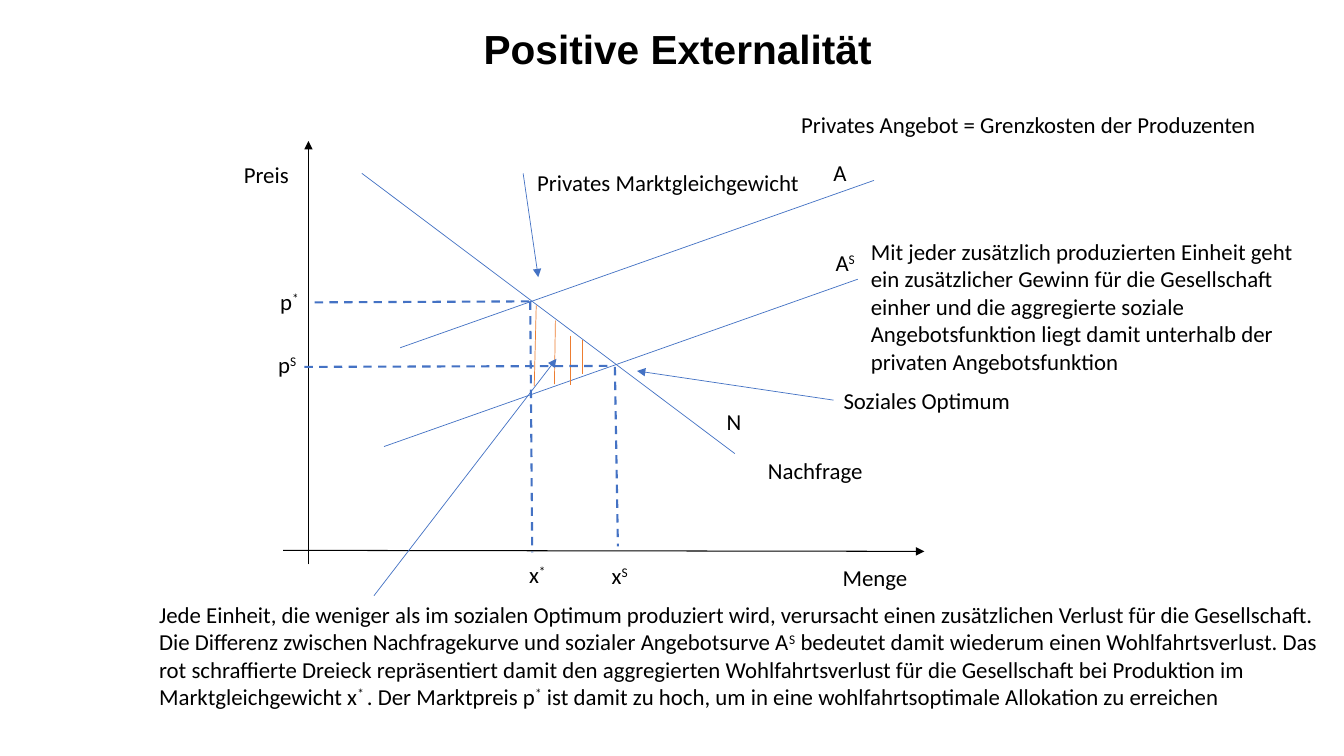
from dataclasses import dataclass

from lxml import etree
from pptx import Presentation
from pptx.dml.color import RGBColor
from pptx.enum.dml import MSO_LINE
from pptx.enum.shapes import MSO_CONNECTOR
from pptx.enum.text import MSO_ANCHOR, MSO_AUTO_SIZE, PP_ALIGN
from pptx.oxml.ns import qn
from pptx.util import Inches, Pt

STRAIGHT = MSO_CONNECTOR.STRAIGHT
DASH = MSO_LINE.DASH
MIDDLE = MSO_ANCHOR.MIDDLE
CENTER = PP_ALIGN.CENTER
FIT_SHAPE = MSO_AUTO_SIZE.SHAPE_TO_FIT_TEXT
KEEP_SIZE = MSO_AUTO_SIZE.NONE

COLUMNS, ROWS = 133.33, 75
CELL = 0.1
LABEL_ROWS = 3.8
SOCIAL_SHIFT = (-1.6, 9.8)


@dataclass(frozen=True)
class Theme:
    ink: RGBColor = RGBColor(0x00, 0x00, 0x00)
    curve: RGBColor = RGBColor(0x44, 0x72, 0xC4)
    loss: RGBColor = RGBColor(0xED, 0x7D, 0x31)
    title_font: str = "Arial"
    text_font: str = "Calibri"
    title_size: float = 29
    text_size: float = 16.3
    thin: float = 0.5
    axis: float = 0.75
    guide: float = 1.5


def cells(*counts):
    return [Inches(count * CELL) for count in counts]


class Diagram:
    def __init__(self, slide, theme):
        self.slide = slide
        self.theme = theme

    def run(self, paragraph, wording, font, size, bold=False, raised=False):
        run = paragraph.add_run()
        run.text = wording
        run.font.name = font
        run.font.size = Pt(size)
        run.font.bold = bold
        run.font.color.rgb = self.theme.ink
        if raised:
            run.font._element.set("baseline", "30000")

    def frame(self, column, row, width, height):
        return self.slide.shapes.add_textbox(*cells(column, row, width, height)).text_frame

    def title(self, column, row, width, height, wording):
        frame = self.frame(column, row, width, height)
        frame.word_wrap = True
        frame.vertical_anchor = MIDDLE
        paragraph = frame.paragraphs[0]
        paragraph.alignment = CENTER
        self.run(paragraph, wording, self.theme.title_font, self.theme.title_size, bold=True)

    def text(self, column, row, width, height, pieces, wrap=True):
        frame = self.frame(column, row, width, height)
        frame.word_wrap = wrap
        frame.auto_size = KEEP_SIZE if wrap else FIT_SHAPE
        for index, piece in enumerate(pieces):
            self.run(frame.paragraphs[0], piece, self.theme.text_font,
                     self.theme.text_size, raised=index % 2 == 1)

    def label(self, column, row, width, *pieces):
        self.text(column, row, width, LABEL_ROWS, pieces, wrap=False)

    def line(self, start, end, color, width, dashed=False, arrow=False):
        connector = self.slide.shapes.add_connector(STRAIGHT, *cells(*start, *end))
        connector.line.color.rgb = color
        connector.line.width = Pt(width)
        if dashed:
            connector.line.dash_style = DASH
        if arrow:
            etree.SubElement(connector.line._get_or_add_ln(), qn("a:tailEnd"), type="triangle")
        etree.SubElement(connector._element.spPr, qn("a:effectLst"))

    def axis(self, start, end):
        self.line(start, end, self.theme.ink, self.theme.axis, arrow=True)

    def curve(self, start, end):
        self.line(start, end, self.theme.curve, self.theme.thin)

    def pointer(self, start, end):
        self.line(start, end, self.theme.curve, self.theme.thin, arrow=True)

    def guide(self, start, end):
        self.line(start, end, self.theme.curve, self.theme.guide, dashed=True)

    def hatch(self, start, end):
        self.line(start, end, self.theme.loss, self.theme.thin)


def draw_market(diagram):
    diagram.axis((30.6, 56), (30.6, 14))
    diagram.axis((28.1, 54.6), (91.7, 54.7))

    diagram.curve((35.9, 17.2), (72.9, 45))
    supply_start, supply_end = (39.7, 34.5), (86.7, 17.9)
    for across, down in ((0, 0), SOCIAL_SHIFT):
        diagram.curve((supply_start[0] + across, supply_start[1] + down),
                      (supply_end[0] + across, supply_end[1] + down))

    for start, end in (
        ((53.2, 30.3), (53, 38.3)),
        ((55.1, 31.8), (55, 38.1)),
        ((56.6, 33.3), (56.6, 38.2)),
        ((57.8, 33.7), (57.8, 37.1)),
    ):
        diagram.hatch(start, end)

    for start, end in (
        ((82.7, 39.7), (63.2, 36.8)),
        ((51.9, 17.2), (53.4, 27.5)),
        ((37.1, 59.1), (55.2, 35.6)),
    ):
        diagram.pointer(start, end)

    for start, end in (
        ((52.6, 29.9), (52.8, 54.8)),
        ((61, 36.4), (61.3, 54.2)),
        ((30.2, 36.4), (60.8, 36.3)),
        ((52.5, 29.9), (30.6, 30)),
    ):
        diagram.guide(start, end)


def write_texts(diagram):
    diagram.title(22.3, 0.7, 89.9, 8.1, "Positive Externalität")
    for label in (
        (23.2, 15.4, 6.5, "Preis"),
        (82.6, 55.4, 8.5, "Menge"),
        (71.1, 40, 3.5, "N"),
        (75.2, 44.8, 11.5, "Nachfrage"),
        (78.5, 10.5, 47.7, "Privates Angebot = Grenzkosten der Produzenten"),
        (81.7, 15.3, 3.4, "A"),
        (81.9, 24.2, 4.1, "A", "S"),
        (82.7, 37.9, 18.7, "Soziales Optimum"),
        (52.3, 16.2, 28.3, "Privates Marktgleichgewicht"),
        (59.7, 55.2, 3.7, "x", "S"),
        (51.5, 55.1, 3.8, "x", "*"),
        (26.6, 34.3, 3.9, "p", "S"),
        (26.8, 28, 4, "p", "*"),
    ):
        diagram.label(*label)

    diagram.text(85.4, 23.1, 46.2, 9.1, (
        "Mit jeder zusätzlich produzierten Einheit geht ein zusätzlicher Gewinn für die "
        "Gesellschaft einher und die aggregierte soziale Angebotsfunktion liegt damit "
        "unterhalb der privaten Angebotsfunktion",
    ))
    diagram.text(14.8, 59.1, 118.5, 12.5, (
        "Jede Einheit, die weniger als im sozialen Optimum produziert wird, verursacht einen "
        "zusätzlichen Verlust für die Gesellschaft. Die Differenz zwischen Nachfragekurve "
        "und sozialer Angebotsurve A",
        "S",
        " bedeutet damit wiederum einen Wohlfahrtsverlust. Das rot schraffierte Dreieck "
        "repräsentiert damit den aggregierten Wohlfahrtsverlust für die Gesellschaft bei "
        "Produktion im Marktgleichgewicht x",
        "* ",
        ". Der Marktpreis p",
        "*",
        " ist damit zu hoch, um in eine wohlfahrtsoptimale Allokation zu erreichen",
    ))


def main():
    presentation = Presentation()
    presentation.slide_width, presentation.slide_height = cells(COLUMNS, ROWS)
    slide = presentation.slides.add_slide(presentation.slide_layouts[6])
    diagram = Diagram(slide, Theme())
    draw_market(diagram)
    write_texts(diagram)
    presentation.save("out.pptx")


if __name__ == "__main__":
    main()
